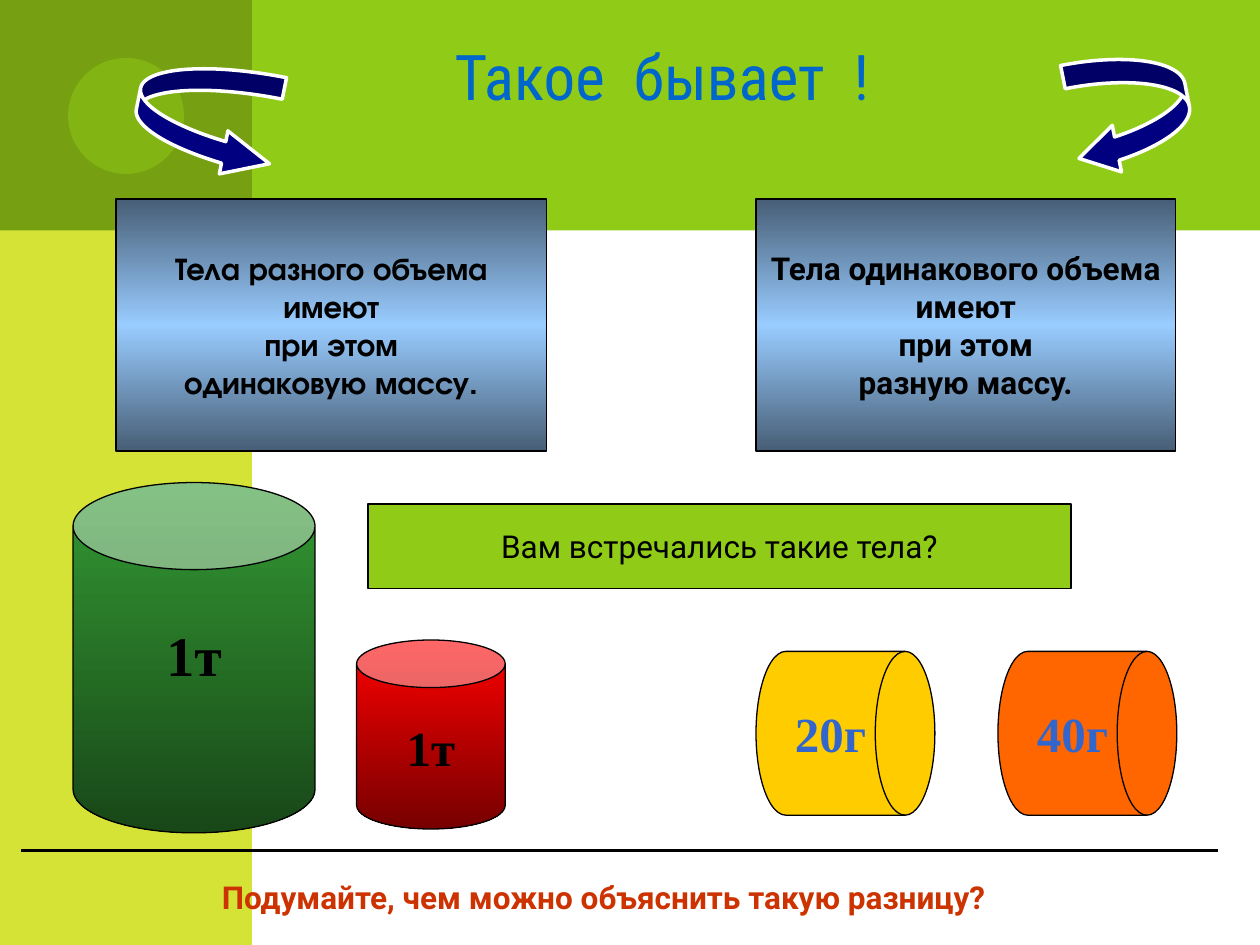
from copy import deepcopy
from dataclasses import dataclass

from lxml.etree import SubElement
from pptx import Presentation
from pptx.dml.color import RGBColor
from pptx.enum.shapes import MSO_CONNECTOR, MSO_SHAPE
from pptx.enum.text import MSO_ANCHOR, PP_ALIGN
from pptx.oxml.ns import qn
from pptx.util import Inches, Pt


@dataclass(frozen=True)
class Theme:
    green: str = "8FCB17"
    lime: str = "D4E336"
    olive: str = "769F11"
    black: str = "000000"
    white: str = "FFFFFF"
    navy: str = "000080"
    title: str = "0066CC"
    weight: str = "3366CC"
    question: str = "CC3300"
    yellow: str = "FFCC00"
    orange: str = "FF6600"
    steel: tuple = ("475E76", "99CCFF", "475E76")
    big_can: tuple = ("339933", "184718")
    small_can: tuple = ("FF0000", "760000")
    title_size: int = 36
    big_size: int = 32
    weight_size: int = 28
    body_size: int = 18
    sans: str = "Roboto"
    condensed: str = "Roboto Condensed"
    geometric: str = "TeX Gyre Adventor"
    serif: str = "Times New Roman"


T = Theme()


def rgb(color):
    return RGBColor.from_string(color)


def paint(sp, fill):
    """Solid fill for one colour, top-to-bottom gradient for several."""
    if isinstance(fill, str):
        sp.fill.solid()
        sp.fill.fore_color.rgb = rgb(fill)
        return
    sp.fill.gradient()
    sp.fill.gradient_angle = 270
    stops = sp._element.spPr.find(qn("a:gradFill")).find(qn("a:gsLst"))
    for _ in fill[2:]:
        stops.append(deepcopy(stops[-1]))
    for i, (stop, color) in enumerate(zip(sp.fill.gradient_stops, fill)):
        stop.color.rgb = rgb(color)
        stop.position = i / (len(fill) - 1)


def add_shape(s, kind, box, fill, line=None, width=0.75, adj=(), rotation=0):
    sp = s.shapes.add_shape(kind, *map(Inches, box))
    sp.shadow.inherit = False
    sp.rotation = rotation
    for i, value in enumerate(adj):
        sp.adjustments[i] = value
    paint(sp, fill)
    if line:
        sp.line.color.rgb = rgb(line)
        sp.line.width = Pt(width)
    else:
        sp.line.fill.background()
    return sp


def write(sp, lines, font, size, color=T.black, bold=False,
          align=PP_ALIGN.CENTER, **frame):
    tf = sp.text_frame
    settings = {"word_wrap": False, "vertical_anchor": MSO_ANCHOR.MIDDLE, **frame}
    for name, value in settings.items():
        setattr(tf, name, value)
    for i, line in enumerate(lines):
        p = tf.paragraphs[0] if i == 0 else tf.add_paragraph()
        p.alignment = align
        r = p.add_run()
        r.text = line
        for name, value in {"name": font, "size": Pt(size), "bold": bold}.items():
            setattr(r.font, name, value)
        r.font.color.rgb = rgb(color)


def add_background(s, width, height):
    side, band = 2, 1.83
    add_shape(s, MSO_SHAPE.RECTANGLE, (0.5, 0, width - 0.5, band), T.green)
    add_shape(s, MSO_SHAPE.RECTANGLE, (0, 0, side, height), T.lime)
    add_shape(s, MSO_SHAPE.RECTANGLE, (0, 0, side, band), T.olive)
    dot = add_shape(s, MSO_SHAPE.OVAL, (0.54, 0.46, 0.92, 0.92), T.green)
    color = dot._element.spPr.find(qn("a:solidFill"))[0]
    SubElement(color, qn("a:alpha"), val="50000")


def add_can(s, box, fill, adj, size, **frame):
    sp = add_shape(s, MSO_SHAPE.CAN, box, fill, T.black, adj=(adj,))
    write(sp, ["1т"], T.serif, size, bold=True, **frame)


def add_drum(s, box, fill, label):
    sp = add_shape(s, MSO_SHAPE.FLOWCHART_DIRECT_ACCESS_STORAGE, box, fill, T.black)
    write(sp, [label], T.serif, T.weight_size, T.weight, True)


def add_statement(s, box, lines, font):
    sp = add_shape(s, MSO_SHAPE.RECTANGLE, box, T.steel, T.black)
    write(sp, lines, font, T.body_size, bold=True)


def add_title(s, box):
    tb = s.shapes.add_textbox(*map(Inches, box))
    write(tb, ["Такое  бывает  !"], T.condensed, T.title_size, T.title,
          vertical_anchor=MSO_ANCHOR.TOP)


def add_prompt(s, box):
    sp = add_shape(s, MSO_SHAPE.RECTANGLE, box, T.green, T.black)
    write(sp, ["Вам встречались такие тела?"], T.sans, T.body_size)


def add_footer(s, box):
    rule = s.shapes.add_connector(MSO_CONNECTOR.STRAIGHT, Inches(0.17),
                                  Inches(6.75), Inches(9.67), Inches(6.75))
    rule.line.color.rgb = rgb(T.black)
    rule.line.width = Pt(2.25)
    SubElement(rule._element.spPr, qn("a:effectLst"))
    tb = s.shapes.add_textbox(*map(Inches, box))
    write(tb, ["Подумайте, чем можно объяснить такую разницу?"], T.sans,
          T.body_size, T.question, True, PP_ALIGN.LEFT, word_wrap=True,
          margin_left=Inches(0.34), vertical_anchor=MSO_ANCHOR.TOP)


def add_arrow(s, kind, box, rotation, head):
    add_shape(s, kind, box, T.navy, T.white, 2, (0.2, 0.4, head), rotation)


def main():
    prs = Presentation()
    prs.slide_width, prs.slide_height = Inches(10), Inches(7.5)
    s = prs.slides.add_slide(prs.slide_layouts[6])
    add_background(s, 10, 7.5)

    # Bodies: equal masses on the left, equal volumes on the right
    add_can(s, (0.58, 3.83, 1.92, 2.78), T.big_can, 0.36, T.big_size,
            margin_bottom=Inches(0.45))
    add_can(s, (2.83, 5.08, 1.18, 1.5), T.small_can, 0.32, T.weight_size)
    drums = ((T.yellow, "20г"), (T.orange, "40г"))
    for i, (fill, label) in enumerate(drums):
        add_drum(s, (6 + 1.92 * i, 5.17, 1.42, 1.3), fill, label)

    # Title, statements and questions
    add_title(s, (2.42, 0.25, 5.67, 0.79))
    add_statement(s, (0.92, 1.58, 3.42, 2),
                  ["Тела разного объема", "имеют", "при этом",
                   "одинаковую массу."], T.geometric)
    add_statement(s, (6, 1.58, 3.33, 2),
                  ["Тела одинакового объема", "имеют", "при этом",
                   "разную массу."], T.sans)
    add_prompt(s, (2.92, 4, 5.58, 0.67))
    add_footer(s, (1.42, 6.92, 7.31, 0.4))

    # Arrows from the title to the statements
    add_arrow(s, MSO_SHAPE.CURVED_RIGHT_ARROW, (1.08, 0.5, 1.12, 0.87), 11.2, 0.43)
    add_arrow(s, MSO_SHAPE.CURVED_LEFT_ARROW, (8.5, 0.42, 0.94, 0.94), 348.8, 0.33)
    prs.save("out.pptx")


if __name__ == "__main__":
    main()
